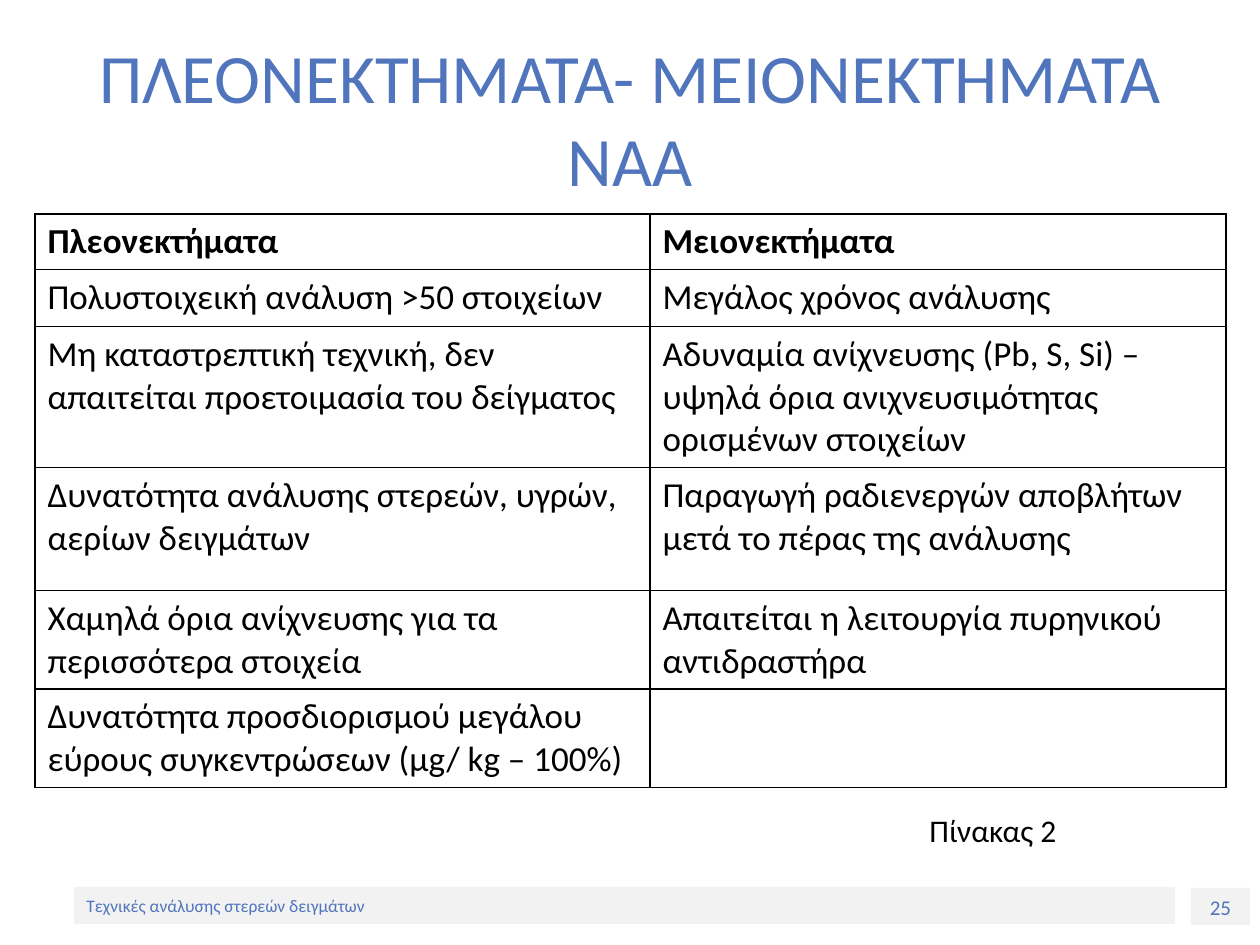
from lxml.etree import SubElement
from pptx import Presentation
from pptx.dml.color import RGBColor
from pptx.enum.shapes import MSO_SHAPE
from pptx.enum.text import MSO_ANCHOR, MSO_AUTO_SIZE, PP_ALIGN
from pptx.oxml.ns import qn
from pptx.util import Pt

EMU_PER_PX = 914400 / 126
FONT = "Calibri"
BLUE = RGBColor(0x50, 0x75, 0xBC)
BLACK = RGBColor(0, 0, 0)
PALE_GREY = RGBColor(0xF2, 0xF2, 0xF2)

COLUMN_WIDTHS = [615, 576]
ROW_HEIGHTS = [49, 57, 123, 123, 86, 86]
ROWS = [
    ("Πλεονεκτήματα", "Μειονεκτήματα"),
    ("Πολυστοιχεική ανάλυση >50 στοιχείων", "Μεγάλος χρόνος ανάλυσης"),
    ("Μη καταστρεπτική τεχνική, δεν απαιτείται προετοιμασία του δείγματος",
     "Αδυναμία ανίχνευσης (Pb, S, Si) – υψηλά όρια ανιχνευσιμότητας ορισμένων στοιχείων"),
    ("Δυνατότητα ανάλυσης στερεών, υγρών, αερίων δειγμάτων",
     "Παραγωγή ραδιενεργών αποβλήτων μετά το πέρας της ανάλυσης"),
    ("Χαμηλά όρια ανίχνευσης για τα περισσότερα στοιχεία",
     "Απαιτείται η λειτουργία πυρηνικού αντιδραστήρα"),
    ("Δυνατότητα προσδιορισμού μεγάλου εύρους συγκεντρώσεων (μg/ kg – 100%)", ""),
]


def px(length):
    return round(length * EMU_PER_PX)


def write(frame, text, size, color, bold=False, align=PP_ALIGN.LEFT):
    para = frame.paragraphs[0]
    para.alignment = align
    para.font.size = Pt(size)
    if text:
        span = para.add_run()
        span.text = text
        font = span.font
        font.name, font.size, font.bold = FONT, Pt(size), bold
        font.color.rgb = color


def add_title(page, text):
    title = page.shapes.title
    title.left, title.top, title.width, title.height = px(63), px(38), px(1134), px(158)
    frame = title.text_frame
    frame.word_wrap = True
    frame.auto_size = MSO_AUTO_SIZE.NONE
    frame.vertical_anchor = MSO_ANCHOR.MIDDLE
    write(frame, text, 39.6, BLUE, align=PP_ALIGN.CENTER)


def add_footer_bar(page, left, top, width, text, size, anchor, align):
    bar = page.shapes.add_shape(MSO_SHAPE.RECTANGLE, px(left), px(top), px(width), px(37))
    bar.shadow.inherit = False
    bar.fill.solid()
    bar.fill.fore_color.rgb = PALE_GREY
    bar.line.fill.background()
    bar.text_frame.vertical_anchor = anchor
    write(bar.text_frame, text, size, BLUE, align=align)


def add_caption(page, text):
    box = page.shapes.add_textbox(px(917), px(800), px(208), px(59))
    box.text_frame.word_wrap = True
    box.text_frame.vertical_anchor = MSO_ANCHOR.MIDDLE
    write(box.text_frame, text, 18, BLACK)


def set_borders(cell):
    properties = cell._tc.get_or_add_tcPr()
    for side in ("a:lnL", "a:lnR", "a:lnT", "a:lnB"):
        line = SubElement(properties, qn(side), w=str(Pt(1)))
        fill = SubElement(line, qn("a:solidFill"))
        SubElement(fill, qn("a:srgbClr"), val=str(BLACK))


def add_comparison_table(page):
    table = page.shapes.add_table(
        len(ROWS), len(COLUMN_WIDTHS), px(35), px(214),
        px(sum(COLUMN_WIDTHS)), px(sum(ROW_HEIGHTS))).table
    table.first_row = table.horz_banding = False
    for column, width in zip(table.columns, COLUMN_WIDTHS):
        column.width = px(width)
    for index, (row, height, texts) in enumerate(zip(table.rows, ROW_HEIGHTS, ROWS)):
        row.height = px(height)
        for cell, text in zip(row.cells, texts):
            set_borders(cell)
            cell.fill.background()
            write(cell.text_frame, text, 20, BLACK, bold=index == 0)


def main():
    deck = Presentation()
    deck.slide_width, deck.slide_height = px(1260), px(945)
    page = deck.slides.add_slide(deck.slide_layouts[5])
    add_footer_bar(page, 1191, 888, 59, "25", 12, MSO_ANCHOR.TOP, PP_ALIGN.CENTER)
    add_footer_bar(page, 74, 887, 1101, "Τεχνικές ανάλυσης στερεών δειγμάτων", 10,
                   MSO_ANCHOR.MIDDLE, PP_ALIGN.LEFT)
    add_title(page, "ΠΛΕΟΝΕΚΤΗΜΑΤΑ- ΜΕΙΟΝΕΚΤΗΜΑΤΑ ΝΑΑ")
    add_comparison_table(page)
    add_caption(page, "Πίνακας 2")
    deck.save("out.pptx")


if __name__ == "__main__":
    main()
